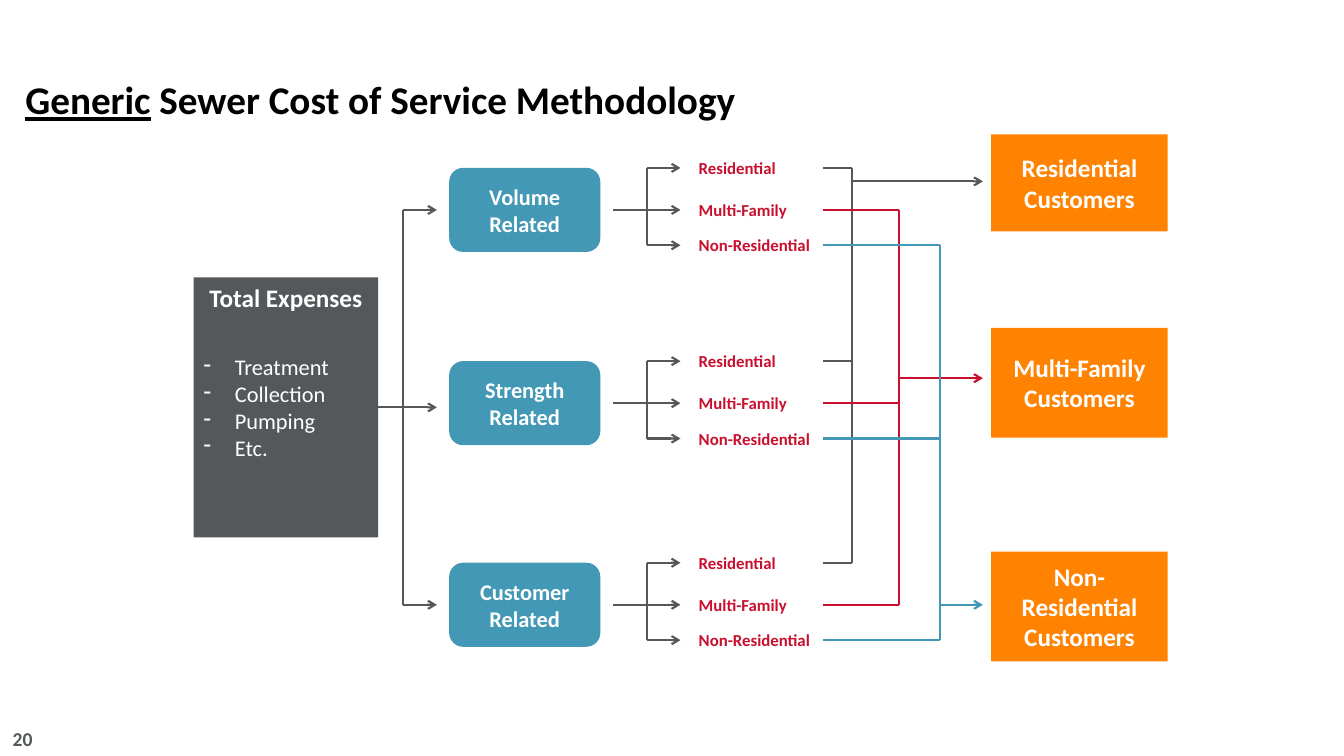
from lxml.etree import SubElement
from pptx import Presentation
from pptx.dml.color import RGBColor
from pptx.enum.shapes import MSO_CONNECTOR, MSO_SHAPE
from pptx.enum.text import MSO_ANCHOR, PP_ALIGN
from pptx.oxml.ns import qn
from pptx.util import Cm, Pt

COLORS = {"black": "000000", "white": "FFFFFF", "gray": "54585A",
          "blue": "4298B5", "red": "C8102E", "orange": "FF8200"}
TITLE = [("Generic", True), (" Sewer Cost of Service Methodology", False)]
PAGE_NUMBER = "20"
EXPENSES_HEADING = "Total Expenses"
EXPENSES = ["Treatment", "Collection", "Pumping", "Etc."]
CATEGORIES = [("Volume Related", 5.29), ("Strength Related", 10.16),
              ("Customer Related", 15.24)]
CLASSES = [
    {"label": "Residential", "offset": -1.06, "color": "gray",
     "trunk": 21.46, "arrow": 4.57, "top": 3.39, "height": 2.44},
    {"label": "Multi-Family", "offset": 0, "color": "red",
     "trunk": 22.66, "arrow": 9.53, "top": 8.26, "height": 2.77},
    {"label": "Non-Residential", "offset": 0.89, "color": "blue",
     "trunk": 23.7, "arrow": 15.24, "top": 13.9, "height": 2.77},
]

EXPENSES_LEFT, EXPENSES_TOP = 4.88, 6.99
EXPENSES_WIDTH, EXPENSES_HEIGHT = 4.65, 6.55
EXPENSES_MIDDLE = EXPENSES_TOP + EXPENSES_HEIGHT / 2
EXPENSES_RIGHT = EXPENSES_LEFT + EXPENSES_WIDTH
MAIN_TRUNK, MAIN_TIP = 10.16, 11.01
CATEGORY_LEFT, CATEGORY_WIDTH, CATEGORY_HEIGHT = 11.32, 3.81, 2.12
FORK_START, FORK_TRUNK, FORK_TIP = 15.45, 16.3, 17.15
LABEL_LEFT, LABEL_WIDTH, LABEL_HEIGHT = 17.36, 3.6, 0.76
COLLECTOR_START, COLLECTOR_TIP = 20.75, 24.77
CUSTOMER_LEFT, CUSTOMER_WIDTH = 24.98, 4.45


def rgb(color):
    return RGBColor.from_string(COLORS[color])


def add_run(paragraph, text, size, color, bold=True, underline=False):
    run = paragraph.add_run()
    run.text = text
    font = run.font
    font.name, font.size, font.bold = "Calibri", Pt(size), bold
    font.color.rgb = rgb(color)
    if underline:
        font.underline = True


def add_text(slide, left, top, width, height, text, size, color, align):
    box = slide.shapes.add_textbox(Cm(left), Cm(top), Cm(width), Cm(height))
    box.text_frame.word_wrap = True
    paragraph = box.text_frame.paragraphs[0]
    paragraph.alignment = align
    if text:
        add_run(paragraph, text, size, color)
    return box.text_frame


def add_box(slide, kind, left, top, width, height, fill, text="", size=18):
    shape = slide.shapes.add_shape(kind, Cm(left), Cm(top), Cm(width), Cm(height))
    shape.shadow.inherit = False
    shape.fill.solid()
    shape.fill.fore_color.rgb = rgb(fill)
    shape.line.fill.background()
    shape.text_frame.word_wrap = True
    shape.text_frame.vertical_anchor = MSO_ANCHOR.MIDDLE
    if text:
        paragraph = shape.text_frame.paragraphs[0]
        paragraph.alignment = PP_ALIGN.CENTER
        add_run(paragraph, text, size, "white")
    return shape


def add_line(slide, x1, y1, x2, y2, color="gray", arrow=False):
    connector = slide.shapes.add_connector(
        MSO_CONNECTOR.STRAIGHT, Cm(x1), Cm(y1), Cm(x2), Cm(y2))
    connector.line.color.rgb = rgb(color)
    connector.line.width = Pt(1.5)
    if arrow:
        SubElement(connector.line._get_or_add_ln(), qn("a:tailEnd"), type="arrow")
    SubElement(connector._element.spPr, qn("a:effectLst"))
    return connector


def add_title(slide):
    frame = add_text(slide, 0, 0, 33.87, 3.22, "", 28, "black", PP_ALIGN.LEFT)
    frame.vertical_anchor = MSO_ANCHOR.BOTTOM
    frame.margin_left = frame.margin_right = Cm(0.64)
    paragraph = frame.paragraphs[0]
    paragraph.line_spacing = Pt(26)
    for text, underline in TITLE:
        add_run(paragraph, text, 28, "black", underline=underline)


def add_expenses(slide):
    shape = add_box(slide, MSO_SHAPE.RECTANGLE, EXPENSES_LEFT, EXPENSES_TOP,
                    EXPENSES_WIDTH, EXPENSES_HEIGHT, "gray")
    frame = shape.text_frame
    for index, expense in enumerate(EXPENSES):
        paragraph = frame.add_paragraph() if index else frame.paragraphs[0]
        paragraph.alignment = PP_ALIGN.LEFT
        properties = paragraph._p.get_or_add_pPr()
        properties.set("marL", str(Cm(0.79)))
        properties.set("indent", str(-Cm(0.79)))
        SubElement(properties, qn("a:buChar"), char="-")
        add_run(paragraph, expense, 16, "white", bold=False)
    add_text(slide, EXPENSES_LEFT, EXPENSES_TOP, EXPENSES_WIDTH, 1.02,
             EXPENSES_HEADING, 18, "white", PP_ALIGN.CENTER)
    return shape


def add_main_fork(slide, expenses):
    stem = add_line(slide, EXPENSES_RIGHT, EXPENSES_MIDDLE,
                    MAIN_TIP, EXPENSES_MIDDLE, arrow=True)
    stem.begin_connect(expenses, 3)
    first, last = CATEGORIES[0][1], CATEGORIES[-1][1]
    add_line(slide, MAIN_TRUNK, first, MAIN_TRUNK, last)
    for middle in (first, last):
        add_line(slide, MAIN_TRUNK, middle, MAIN_TIP, middle, arrow=True)


def add_category(slide, name, middle):
    add_box(slide, MSO_SHAPE.ROUNDED_RECTANGLE, CATEGORY_LEFT,
            middle - CATEGORY_HEIGHT / 2, CATEGORY_WIDTH, CATEGORY_HEIGHT,
            "blue", name, 16)
    add_line(slide, FORK_TRUNK, middle + CLASSES[0]["offset"],
             FORK_TRUNK, middle + CLASSES[-1]["offset"])
    for customer in CLASSES:
        y = middle + customer["offset"]
        start = FORK_TRUNK if customer["offset"] else FORK_START
        add_line(slide, start, y, FORK_TIP, y, arrow=True)
        add_text(slide, LABEL_LEFT, y - LABEL_HEIGHT / 2, LABEL_WIDTH,
                 LABEL_HEIGHT, customer["label"], 12, "red", PP_ALIGN.LEFT)


def add_customer(slide, customer):
    color, trunk, arrow = customer["color"], customer["trunk"], customer["arrow"]
    levels = [middle + customer["offset"] for _, middle in CATEGORIES]
    add_box(slide, MSO_SHAPE.RECTANGLE, CUSTOMER_LEFT, customer["top"],
            CUSTOMER_WIDTH, customer["height"], "orange",
            customer["label"] + " Customers")
    for level in levels:
        add_line(slide, COLLECTOR_START, level, trunk, level, color)
    add_line(slide, trunk, levels[0], trunk, levels[-1], color)
    add_line(slide, trunk, arrow, COLLECTOR_TIP, arrow, color, arrow=True)


def main():
    presentation = Presentation()
    presentation.slide_width, presentation.slide_height = Cm(33.87), Cm(19.05)
    slide = presentation.slides.add_slide(presentation.slide_layouts[6])
    add_title(slide)
    add_main_fork(slide, add_expenses(slide))
    for name, middle in CATEGORIES:
        add_category(slide, name, middle)
    for customer in CLASSES:
        add_customer(slide, customer)
    add_text(slide, 0, 18.19, 1.07, 0.86, PAGE_NUMBER, 14, "gray", PP_ALIGN.RIGHT)
    presentation.save("out.pptx")


if __name__ == "__main__":
    main()
